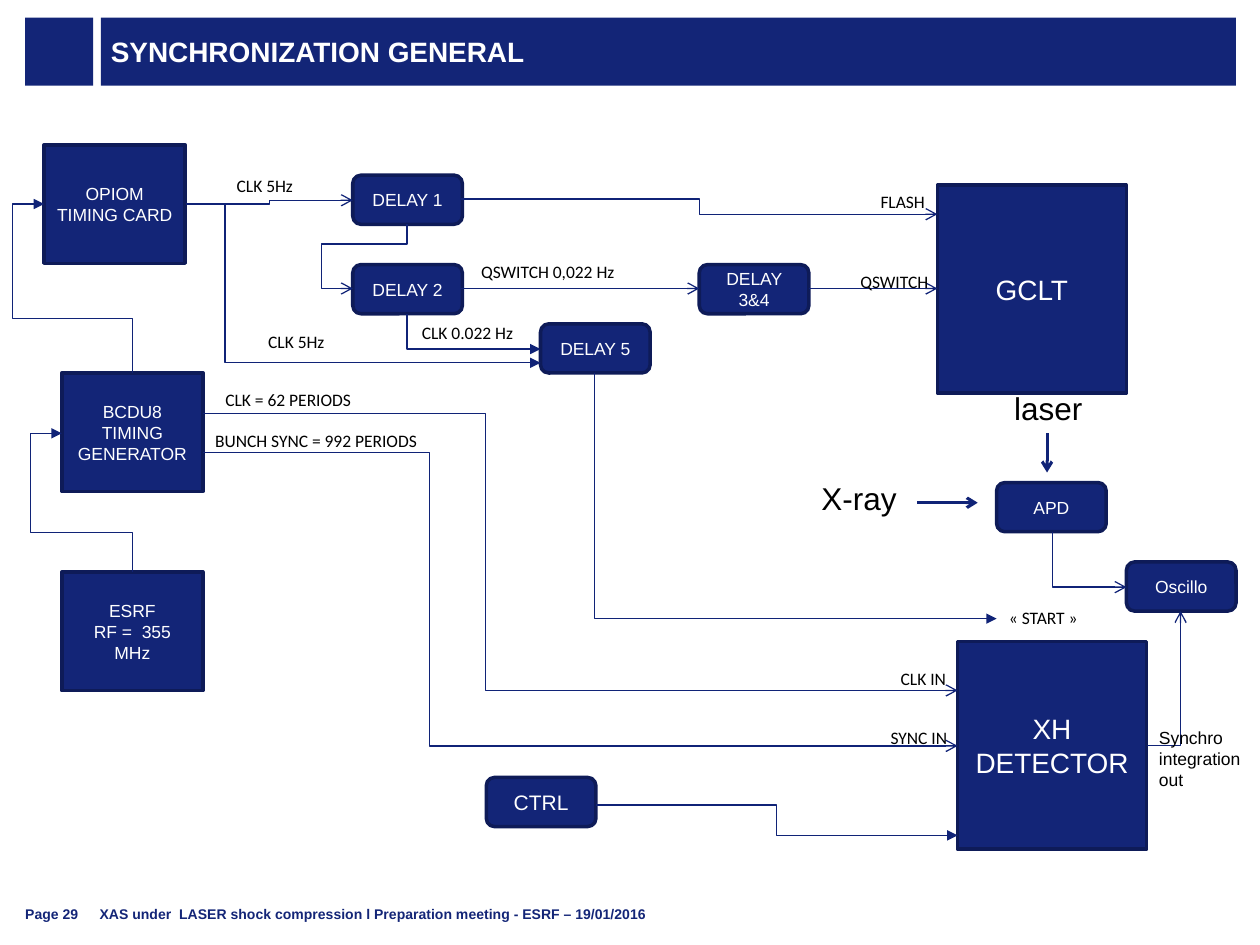
from collections import namedtuple
from math import cos, radians, sin

from lxml.etree import SubElement
from pptx import Presentation
from pptx.dml.color import RGBColor as Rgb
from pptx.enum.shapes import MSO_CONNECTOR as Conn, MSO_SHAPE as Kind
from pptx.enum.text import MSO_ANCHOR as Anchor, MSO_AUTO_SIZE as Fit, PP_ALIGN as Align
from pptx.oxml.ns import qn
from pptx.util import Inches, Pt

Theme = namedtuple("Theme", "navy edge wire white black sans label foot small mid big large")
theme = Theme(
    navy=Rgb.from_string("132577"), edge=Rgb.from_string("0E1B58"),
    wire=Rgb.from_string("102377"), white=Rgb.from_string("FFFFFF"),
    black=Rgb.from_string("000000"), sans="Arial", label="Calibri",
    foot=Pt(8), small=Pt(10), mid=Pt(12), big=Pt(16), large=Pt(18),
)


def put(item, **values):
    for name, value in values.items():
        setattr(item, name, value)


def write(shape, text, size, color, face=theme.sans, bold=False, align=Align.LEFT, **values):
    frame = shape.text_frame
    frame.text = text
    put(frame, **values)
    for para in frame.paragraphs:
        para.alignment = align
        put(para.font, size=size, name=face, bold=bold)
        para.font.color.rgb = color


deck = Presentation()
put(deck, slide_width=Inches(10), slide_height=Inches(7.5))
slide = deck.slides.add_slide(deck.slide_layouts[5])
shapes = slide.shapes

title = shapes.title
put(title, left=Inches(0.8), top=Inches(0.14), width=Inches(9.01), height=Inches(0.54))
title.fill.solid()
title.fill.fore_color.rgb = theme.navy
write(title, "SYNCHRONIZATION GENERAL", theme.big, theme.white, bold=True,
      auto_size=Fit.NONE, vertical_anchor=Anchor.MIDDLE, word_wrap=True,
      margin_left=Inches(0.08), margin_right=Inches(0.08), margin_top=0, margin_bottom=0)

square = shapes.add_shape(Kind.RECTANGLE, Inches(0.2), Inches(0.14), Inches(0.54), Inches(0.54))
square.shadow.inherit = False
square.fill.solid()
square.fill.fore_color.rgb = theme.navy
square.line.fill.background()

feet = [
    ("Page 29", 0.2, 0.45),
    ("XAS under  LASER shock compression l Preparation meeting - ESRF – 19/01/2016", 0.79, 6.69),
]
for text, x, wide in feet:
    box = shapes.add_textbox(Inches(x), Inches(7.09), Inches(wide), Inches(0.23))
    write(box, text, theme.foot, theme.navy, bold=True, word_wrap=True,
          vertical_anchor=Anchor.BOTTOM,
          margin_left=0, margin_right=0, margin_top=0, margin_bottom=0)

card = (Kind.FLOWCHART_PROCESS, 1.12, 0.94)
unit = (Kind.FLOWCHART_PROCESS, 1.5, 1.65)
pill = (Kind.ROUNDED_RECTANGLE, 0.87, 0.39)
nodes = [
    (card, "OPIOM TIMING CARD", 0.35, 1.15, theme.small),
    (card, "BCDU8 TIMING GENERATOR", 0.49, 2.96, theme.small),
    (card, "ESRF\nRF =  355 MHz", 0.49, 4.54, theme.small),
    (unit, "GCLT", 7.44, 1.47, theme.big),
    (unit, "XH DETECTOR", 7.6, 5.09, theme.big),
    (pill, "DELAY 1", 2.8, 1.39, theme.small),
    (pill, "DELAY 2", 2.8, 2.1, theme.small),
    (pill, "DELAY 3&4", 5.55, 2.1, theme.small),
    (pill, "DELAY 5", 4.29, 2.57, theme.small),
    (pill, "APD", 7.91, 3.83, theme.small),
    (pill, "Oscillo", 8.94, 4.46, theme.small),
    (pill, "CTRL", 3.86, 6.17, theme.mid),
]
for (kind, wide, high), text, x, y, size in nodes:
    node = shapes.add_shape(kind, Inches(x), Inches(y), Inches(wide), Inches(high))
    node.shadow.inherit = False
    node.fill.solid()
    node.fill.fore_color.rgb = theme.navy
    node.line.color.rgb = theme.edge
    node.line.width = Pt(2)
    write(node, text, size, theme.white, align=Align.CENTER,
          vertical_anchor=Anchor.MIDDLE, word_wrap=True)

links = [
    ("line", 3.66, 2.29, 5.55, 2.29, "arrow", 0.75, 0, []),
    ("line", 6.42, 2.29, 7.44, 2.29, "arrow", 0.75, 0, []),
    ("line", 8.31, 3.44, 8.31, 3.75, "arrow", 1.75, 0, []),
    ("line", 7.28, 3.99, 7.76, 3.99, "arrow", 1.75, 0, []),
    ("bentConnector3", 1.48, 1.62, 2.8, 1.59, "arrow", 0.75, 0, [50]),
    ("bentConnector3", 3.66, 1.58, 7.44, 1.7, "arrow", 0.75, 0, [50]),
    ("bentConnector3", 1.61, 3.28, 7.6, 5.48, "arrow", 0.75, 0, [37.5]),
    ("bentConnector3", 1.61, 3.59, 7.6, 5.92, "arrow", 0.75, 0, [30]),
    ("bentConnector3", 4.73, 6.39, 7.6, 6.63, "triangle", 0.75, 0, [50]),
    ("bentConnector3", 1.48, 1.62, 4.29, 2.88, "triangle", 0.75, 0, [10.9]),
    ("bentConnector2", 9.1, 5.92, 9.37, 4.85, "arrow", 0.75, 0, []),
    ("bentConnector2", 8.35, 4.22, 8.94, 4.66, "arrow", 0.75, 270, []),
    ("bentConnector2", 4.72, 2.96, 7.91, 4.91, "triangle", 0.75, 270, []),
    ("bentConnector2", 3.23, 2.49, 4.29, 2.77, "triangle", 0.75, 270, []),
    ("bentConnector4", 3.23, 1.78, 2.8, 2.29, "arrow", 0.75, 90, [30.7, 157.7]),
    ("bentConnector4", 1.05, 4.54, 0.49, 3.44, "triangle", 0.75, 270, [28.6, 144.4]),
    ("bentConnector4", 1.05, 2.96, 0.35, 1.62, "triangle", 0.75, 270, [32.4, 135.8]),
]
for kind, x1, y1, x2, y2, tip, thick, turn, bends in links:
    c, s = round(cos(radians(turn))), round(sin(radians(turn)))
    dx, dy = (x2 - x1) / 2, (y2 - y1) / 2
    mx, my = x1 + dx, y1 + dy
    dx, dy = dx * c + dy * s, dy * c - dx * s
    link = shapes.add_connector(Conn.STRAIGHT, Inches(mx - dx), Inches(my - dy),
                                Inches(mx + dx), Inches(my + dy))
    link.line.color.rgb = theme.wire
    link.line.width = Pt(thick)
    props = link._element.spPr
    if turn:
        props.find(qn("a:xfrm")).set("rot", str(turn * 60000))
    shape = props.find(qn("a:prstGeom"))
    shape.set("prst", kind)
    marks = shape.find(qn("a:avLst"))
    for i, bend in enumerate(bends, 1):
        SubElement(marks, qn("a:gd"), name=f"adj{i}", fmla=f"val {round(bend * 1000)}")
    SubElement(props.find(qn("a:ln")), qn("a:tailEnd"), type=tip)
    SubElement(props, qn("a:effectLst"))

tags = [
    ("CLK 5Hz", 1.78, 1.34, 0.66),
    ("CLK 5Hz", 2.03, 2.58, 0.66),
    ("QSWITCH 0,022 Hz", 3.72, 2.02, 1.29),
    ("CLK 0.022 Hz", 3.25, 2.51, 0.94),
    ("CLK = 62 PERIODS", 1.69, 3.04, 1.21),
    ("BUNCH SYNC = 992 PERIODS", 1.61, 3.36, 1.83),
    ("FLASH", 6.89, 1.47, 0.56),
    ("QSWITCH", 6.73, 2.1, 0.75),
    ("« START »", 7.91, 4.77, 0.77),
    ("CLK IN", 7.05, 5.25, 0.57),
    ("SYNC IN", 6.97, 5.72, 0.66),
]
notes = [(*tag, 0.27, theme.small, theme.label, False) for tag in tags] + [
    ("laser", 7.95, 3.04, 0.75, 0.4, theme.large, theme.sans, False),
    ("X-ray", 6.42, 3.75, 0.81, 0.4, theme.large, theme.sans, False),
    ("Synchro integration out", 9.1, 5.72, 0.9, 0.61, theme.small, theme.sans, True),
]
for text, x, y, wide, high, size, face, wrap in notes:
    box = shapes.add_textbox(Inches(x), Inches(y), Inches(wide), Inches(high))
    write(box, text, size, theme.black, face, word_wrap=wrap, auto_size=Fit.SHAPE_TO_FIT_TEXT)

deck.save("out.pptx")
